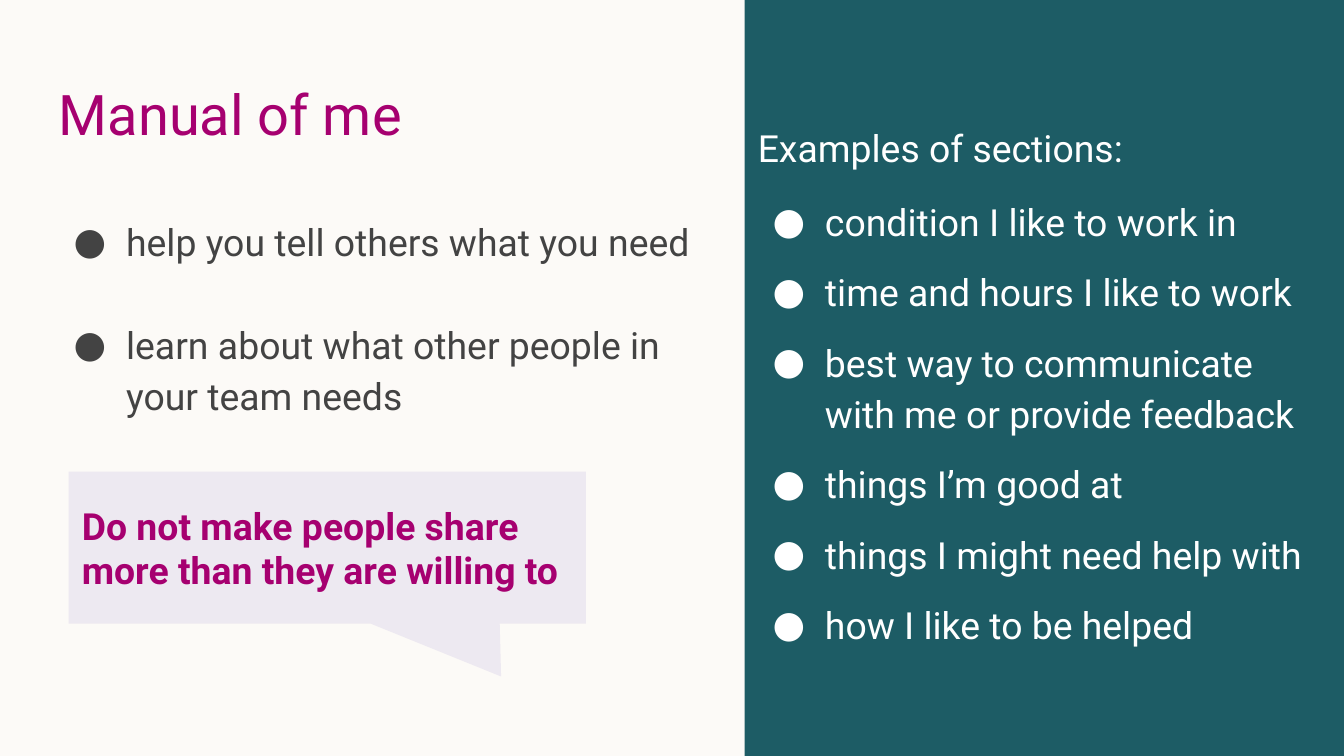
"""Build the "Manual of me" slide with its list, callout and side panel."""
from dataclasses import dataclass

from lxml import etree
from pptx import Presentation
from pptx.dml.color import RGBColor
from pptx.enum.shapes import MSO_SHAPE
from pptx.enum.text import MSO_ANCHOR, PP_ALIGN
from pptx.oxml.ns import qn
from pptx.util import Inches, Pt

RECTANGLE = MSO_SHAPE.RECTANGLE
CALLOUT = MSO_SHAPE.RECTANGULAR_CALLOUT
TOP, MIDDLE = MSO_ANCHOR.TOP, MSO_ANCHOR.MIDDLE
LEFT = PP_ALIGN.LEFT


@dataclass(frozen=True)
class Theme:
    font: str = "Roboto"
    background: str = "FCFAF7"
    accent: str = "A60070"
    ink: str = "434343"
    panel: str = "1D5C65"
    light: str = "FFFFFF"
    lilac: str = "D9D2E9"
    title_size: int = 30
    body_size: int = 20


theme = Theme()


def prepare_frame(shape, anchor=TOP, top_inset=0.1):
    frame = shape.text_frame
    frame.word_wrap = True
    frame.vertical_anchor = anchor
    frame.margin_left = frame.margin_right = frame.margin_bottom = Inches(0.1)
    frame.margin_top = Inches(top_inset)
    return frame


def write_line(frame, text, color, size=theme.body_size, bold=False,
               bullet=False, spacing=1, before=0):
    first = frame.paragraphs[0]
    para = frame.add_paragraph() if first.runs else first
    para.alignment = LEFT
    para.line_spacing = spacing
    para.space_before = Pt(before)
    if bullet:
        properties = para._p.get_or_add_pPr()
        properties.set("marL", str(Inches(0.5)))
        properties.set("indent", str(Inches(-0.39)))
        bullet_color = etree.SubElement(properties, qn("a:buClr"))
        etree.SubElement(bullet_color, qn("a:srgbClr"), val=color)
        etree.SubElement(properties, qn("a:buFont"), typeface=theme.font)
        etree.SubElement(properties, qn("a:buChar"), char="●")
    para.font.name = theme.font
    para.font.size = Pt(size)
    para.font.bold = bold
    para.font.color.rgb = RGBColor.from_string(color)
    para.add_run().text = text


deck = Presentation()
deck.slide_width = Inches(10)
deck.slide_height = deck.slide_width * 9 // 16
page = deck.slides.add_slide(deck.slide_layouts[6])
page.background.fill.solid()
page.background.fill.fore_color.rgb = RGBColor.from_string(theme.background)

title = page.shapes.add_textbox(Inches(0.34), Inches(0.49), Inches(4.46), Inches(0.63))
write_line(prepare_frame(title), "Manual of me", theme.accent, theme.title_size)

benefits = page.shapes.add_textbox(Inches(0.34), Inches(1.48), Inches(4.95), Inches(1.71))
benefits_frame = prepare_frame(benefits)
for text, before in (
    ("help you tell others what you need", 0),
    ("learn about what other people in your team needs", 27.5),
):
    write_line(benefits_frame, text, theme.ink, bullet=True, spacing=1.15, before=before)

callout = page.shapes.add_shape(CALLOUT, Inches(0.51), Inches(3.51), Inches(3.85), Inches(1.13))
callout.adjustments[0], callout.adjustments[1] = 0.336, 0.849
panel = page.shapes.add_shape(RECTANGLE, Inches(5.54), 0, Inches(4.46), deck.slide_height)
for shape, color in ((callout, theme.lilac), (panel, theme.panel)):
    shape.shadow.inherit = False
    shape.line.fill.background()
    shape.fill.solid()
    shape.fill.fore_color.rgb = RGBColor.from_string(color)

callout_color = callout._element.spPr.find(qn("a:solidFill"))[0]
etree.SubElement(callout_color, qn("a:alpha"), val="42000")
write_line(prepare_frame(callout, MIDDLE),
           "Do not make people share more than they are willing to",
           theme.accent, bold=True)

sections = (
    "condition I like to work in",
    "time and hours I like to work",
    "best way to communicate with me or provide feedback",
    "things I’m good at",
    "things I might need help with",
    "how I like to be helped",
)
panel_frame = prepare_frame(panel, top_inset=0.6)
write_line(panel_frame, "Examples of sections:", theme.light, spacing=2)
for index, text in enumerate(sections):
    write_line(panel_frame, text, theme.light, bullet=True, spacing=1.15,
               before=10 if index else 12)

deck.save("out.pptx")
